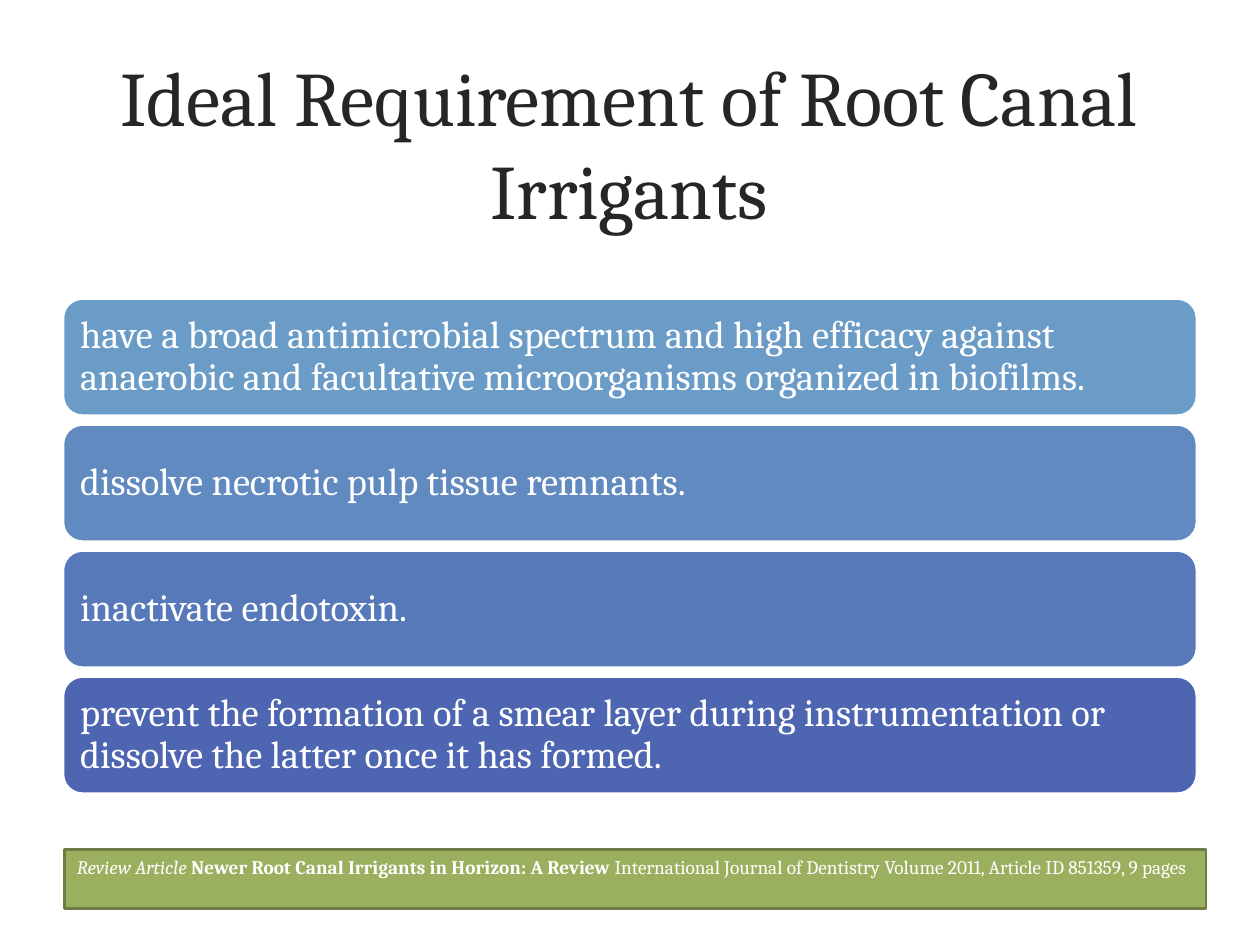
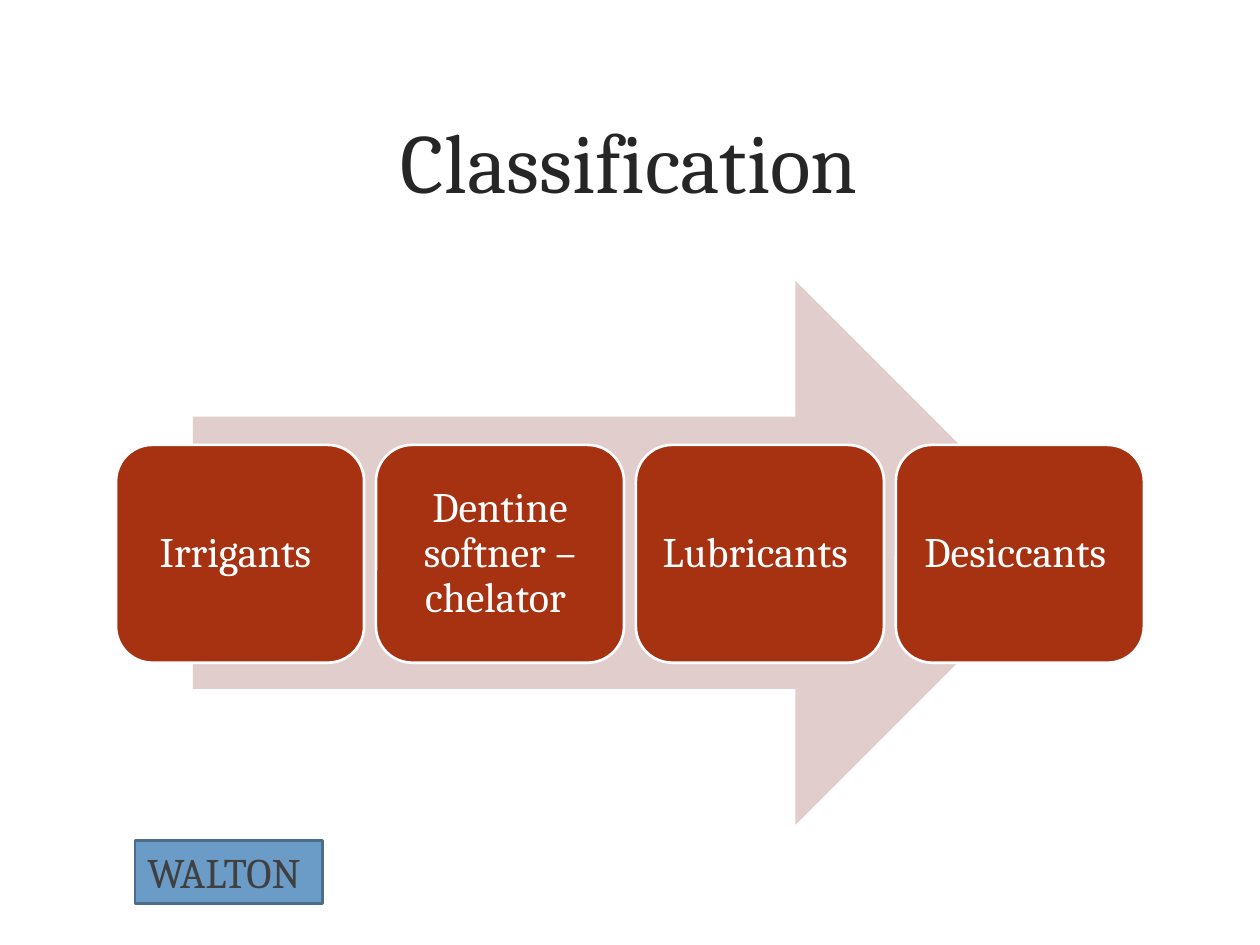
from pptx import Presentation
from pptx.dml.color import RGBColor
from pptx.enum.shapes import MSO_SHAPE as Preset
from pptx.enum.text import MSO_ANCHOR as Anchor, PP_ALIGN as Align
from pptx.util import Cm, Pt

FONT = "Cambria"
WHITE = "FFFFFF"
TITLE_COLOR = "262626"
STEEL_BLUE = "6B9BC7"
RUST = "A63212"


def color(hex_string):
    return RGBColor.from_string(hex_string)


class Deck:
    def __init__(self):
        self.presentation = Presentation()
        self.presentation.slide_width = Cm(25.4)
        self.presentation.slide_height = Cm(19.05)
        self.slide = None

    def add_slide(self, title, top, size):
        layout = self.presentation.slide_layouts[5]
        self.slide = self.presentation.slides.add_slide(layout)
        shape = self.slide.shapes.title
        shape.left, shape.top = Cm(1.52), Cm(top)
        shape.width, shape.height = Cm(22.33), Cm(4.01)
        self.add_text(shape, [(title, False, False)], size, TITLE_COLOR,
                      Align.CENTER)

    def add_text(self, shape, runs, size, text_color, align=Align.LEFT,
                 anchor=Anchor.MIDDLE, spacing=1.0):
        frame = shape.text_frame
        frame.word_wrap = True
        frame.vertical_anchor = anchor
        paragraph = frame.paragraphs[0]
        paragraph.alignment = align
        paragraph.line_spacing = spacing
        for text, bold, italic in runs:
            run = paragraph.add_run()
            run.text = text
            run.font.name = FONT
            run.font.size = Pt(size)
            run.font.bold = bold
            run.font.italic = italic
            run.font.color.rgb = color(text_color)

    def add_shape(self, preset, left, top, width, height, fill, line=None):
        shape = self.slide.shapes.add_shape(
            preset, Cm(left), Cm(top), Cm(width), Cm(height))
        shape.shadow.inherit = False
        shape.fill.solid()
        shape.fill.fore_color.rgb = color(fill)
        if line:
            shape.line.color.rgb = color(line)
            shape.line.width = Pt(1.5)
        else:
            shape.line.fill.background()
        return shape

    def add_card(self, text, left, top, width, height, fill, size, inset,
                 align=Align.LEFT):
        shape = self.add_shape(
            Preset.ROUNDED_RECTANGLE, left, top, width, height, fill, WHITE)
        frame = shape.text_frame
        frame.margin_left = frame.margin_right = Cm(inset)
        frame.margin_top = frame.margin_bottom = Cm(inset)
        self.add_text(shape, [(text, False, False)], size, WHITE, align,
                      spacing=0.9)

    def add_label(self, runs, left, top, width, height, fill, line, size,
                  text_color, anchor=Anchor.MIDDLE):
        shape = self.add_shape(
            Preset.RECTANGLE, left, top, width, height, fill, line)
        self.add_text(shape, runs, size, text_color, anchor=anchor)


def build_requirements(deck):
    deck.add_slide("Ideal Requirement of Root Canal Irrigants", 0.86, 44)
    requirements = [
        ("have a broad antimicrobial spectrum and high efficacy against "
         "anaerobic and facultative microorganisms organized in biofilms.",
         STEEL_BLUE),
        ("dissolve necrotic pulp tissue remnants.", "618AC0"),
        ("inactivate endotoxin.", "5778B9"),
        ("prevent the formation of a smear layer during instrumentation or "
         "dissolve the latter once it has formed.", "4E66B2"),
    ]
    for row, (text, fill) in enumerate(requirements):
        deck.add_card(text, 1.27, 6.02 + row * 2.54, 22.86, 2.36, fill, 22, 0.23)
    citation = [
        ("Review Article ", False, True),
        ("Newer Root Canal Irrigants in Horizon: A Review ", True, False),
        ("International Journal of Dentistry Volume 2011, "
         "Article ID 851359, 9 pages", False, False),
    ]
    deck.add_label(citation, 1.3, 17.12, 23.01, 1.19, "9BB05E", "6E7C43",
                   11, WHITE, Anchor.TOP)


def build_classification(deck):
    deck.add_slide("Classification", 1.22, 48)
    deck.add_shape(Preset.RIGHT_ARROW, 3.89, 5.66, 17.63, 10.97, "E1CECC")
    groups = ["Irrigants ", "Dentine softner –chelator ", "Lubricants ",
              "Desiccants "]
    for column, text in enumerate(groups):
        deck.add_card(text, 2.34 + column * 5.24, 8.97, 5, 4.39, RUST, 24,
                      0.25, Align.CENTER)
    deck.add_label([("WALTON", False, False)], 2.72, 16.94, 3.78, 1.27,
                   STEEL_BLUE, "4B6E8C", 24, "404040")


def main():
    deck = Deck()
    build_requirements(deck)
    build_classification(deck)
    deck.presentation.save("out.pptx")


if __name__ == "__main__":
    main()
